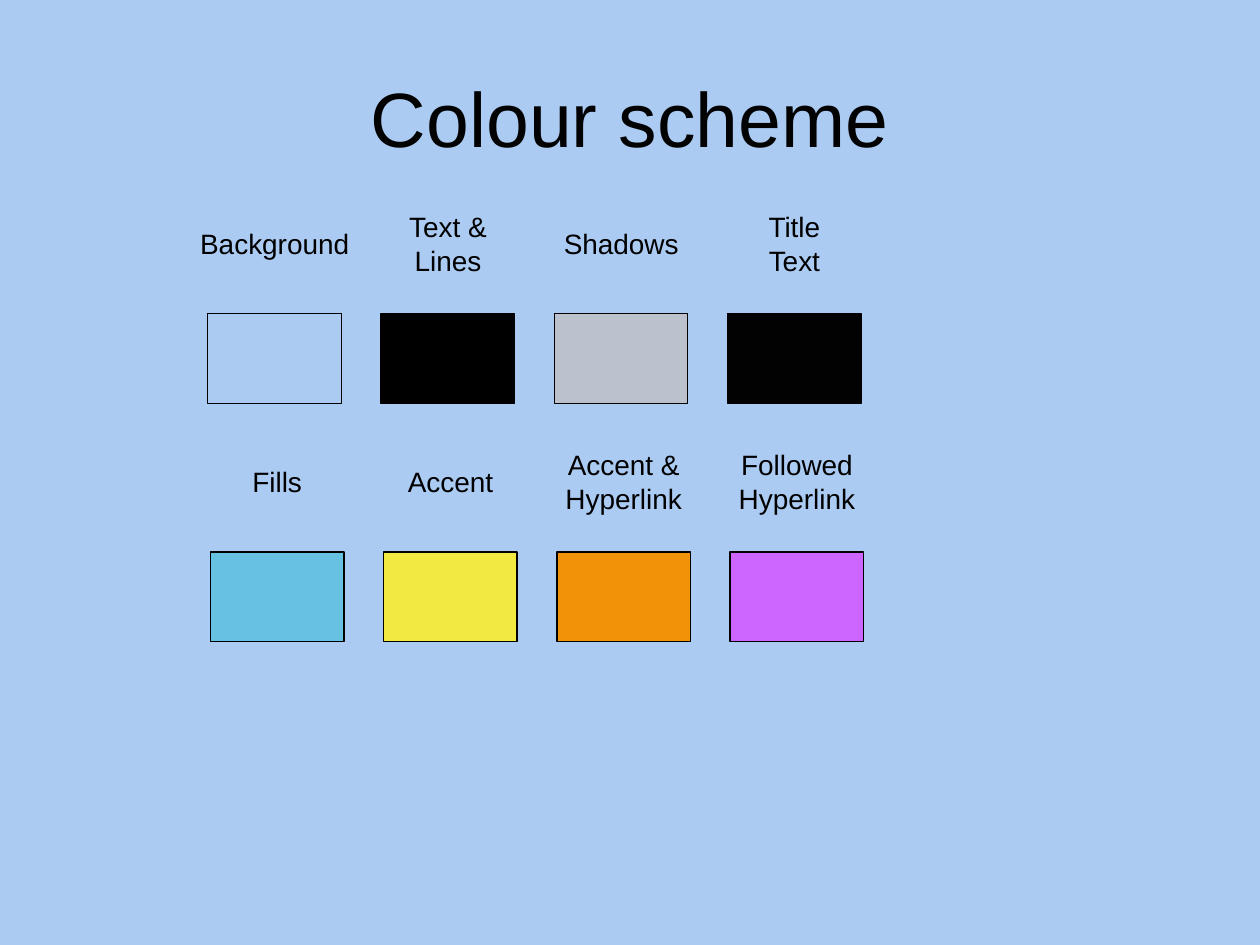
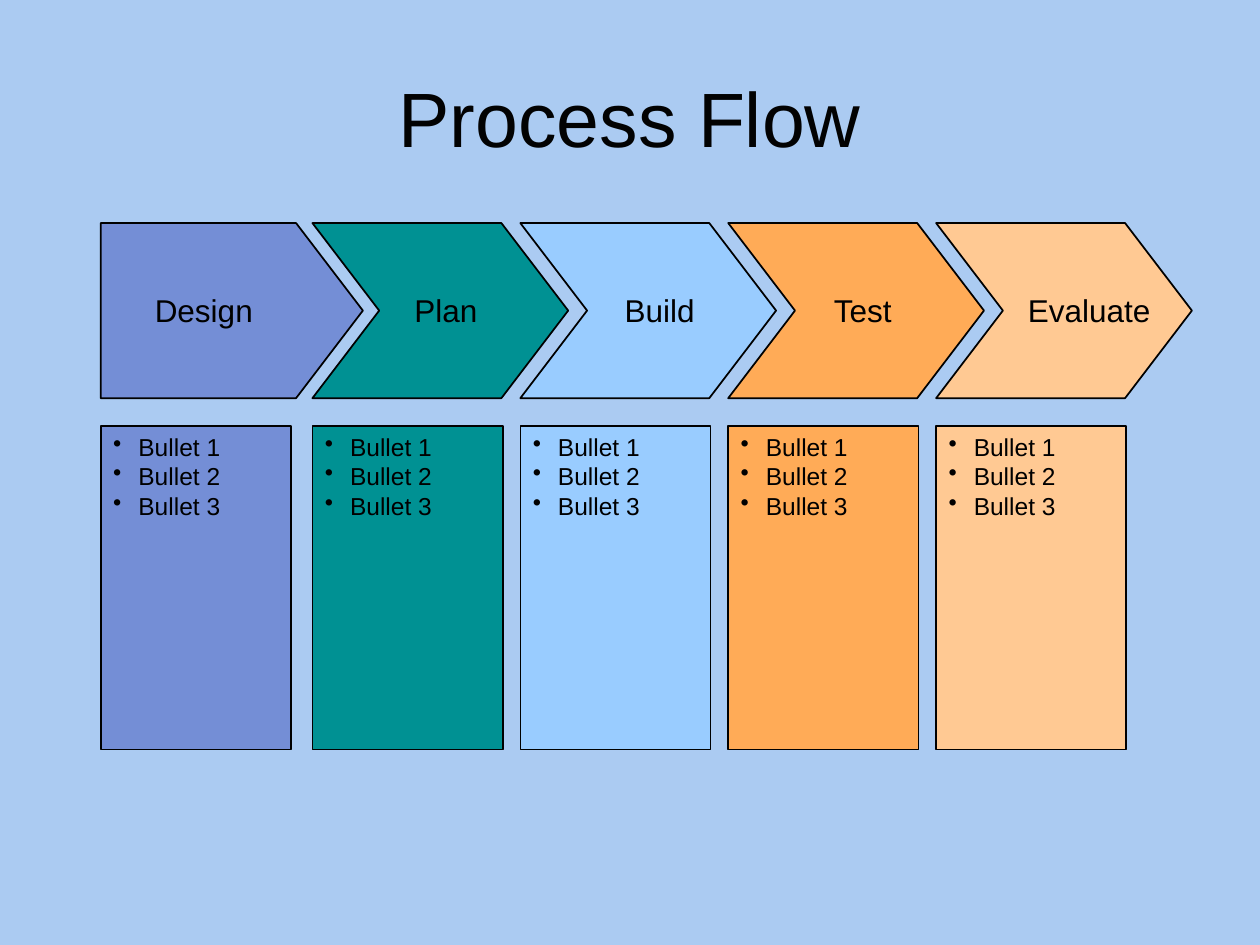
from lxml.etree import SubElement
from pptx import Presentation
from pptx.dml.color import RGBColor
from pptx.enum.shapes import MSO_SHAPE
from pptx.enum.text import MSO_ANCHOR, PP_ALIGN
from pptx.oxml.ns import qn
from pptx.util import Inches, Pt

FONT = "Arial"
COLOURS = {
    "background": "ABCBF2", "text": "000000", "title": "020202",
    "shadows": "BBC1CD", "fills": "67C1E0", "accent": "F2EA40",
    "hyperlink": "F19309", "followed": "CC66FF",
    "design": "748ED6", "plan": "009193", "build": "99CCFF",
    "test": "FFAB57", "evaluate": "FFC993",
}
SCHEME_ROWS = [
    (1.65, 2.49, [("Background", "background"), ("Text &\nLines", "text"),
                  ("Shadows", "shadows"), ("Title\vText", "title")]),
    (1.67, 4.38, [("Fills", "fills"), ("Accent", "accent"),
                  ("Accent &\nHyperlink", "hyperlink"),
                  ("Followed\nHyperlink", "followed")]),
]
STAGES = [
    ("Design", 0.8, 0.33, 0.98),
    ("Plan", 2.48, 0.71, 0.7),
    ("Build", 4.13, 0.73, 0.76),
    ("Test", 5.78, 0.74, 0.69),
    ("Evaluate", 7.43, 0.63, 1.17),
]
BULLETS = ["Bullet 1", "Bullet 2", "Bullet 3"]


def colour(name):
    return RGBColor.from_string(COLOURS[name])


def paint(shape, fill, line_width):
    shape.shadow.inherit = False
    shape.fill.solid()
    shape.fill.fore_color.rgb = colour(fill)
    shape.line.color.rgb = colour("text")
    shape.line.width = Pt(line_width)


def style(paragraph, size, align, ink="text"):
    paragraph.alignment = align
    paragraph.font.name = FONT
    paragraph.font.size = Pt(size)
    paragraph.font.color.rgb = colour(ink)


def add_text(shapes, box, text, size, align, ink="text", wrap=False):
    frame = shapes.add_textbox(*map(Inches, box)).text_frame
    frame.word_wrap = wrap
    frame.vertical_anchor = MSO_ANCHOR.MIDDLE
    frame.text = text
    for paragraph in frame.paragraphs:
        style(paragraph, size, align, ink)


def add_titled_slide(deck, title):
    slide = deck.slides.add_slide(deck.slide_layouts[6])
    slide.background.fill.solid()
    slide.background.fill.fore_color.rgb = colour("background")
    add_text(slide.shapes, (0.5, 0.3, 9, 1.25), title, 44,
             PP_ALIGN.CENTER, "title", wrap=True)
    return slide


def add_rectangle(shapes, box, fill, line_width):
    rectangle = shapes.add_shape(MSO_SHAPE.RECTANGLE, *map(Inches, box))
    paint(rectangle, fill, line_width)
    return rectangle


def add_swatch_row(shapes, left, top, swatches):
    width, height, pitch = 1.06, 0.71, 1.375
    label_width, label_height = 1.38, 0.64
    for column, (label, fill) in enumerate(swatches):
        x = left + column * pitch
        add_rectangle(shapes, (x, top, width, height), fill, 0.75)
        add_text(shapes, (x + (width - label_width) / 2, top - 0.88,
                          label_width, label_height),
                 label, 16, PP_ALIGN.CENTER)


def add_stage_arrow(shapes, left, top, body, notched, fill):
    tip, height = 0.53, 1.39
    outline = [(left + body, top), (left + body + tip, top + height / 2),
               (left + body, top + height), (left, top + height)]
    if notched:
        outline.append((left + tip, top + height / 2))
    builder = shapes.build_freeform(Inches(left), Inches(top))
    builder.add_line_segments([(Inches(x), Inches(y)) for x, y in outline])
    paint(builder.convert_to_shape(), fill, 1)


def add_bullet_panel(shapes, box, fill):
    frame = add_rectangle(shapes, box, fill, 1).text_frame
    frame.word_wrap = True
    frame.vertical_anchor = MSO_ANCHOR.TOP
    frame.text = "\n".join(BULLETS)
    for paragraph in frame.paragraphs:
        properties = paragraph._p.get_or_add_pPr()
        properties.set("marL", str(Inches(0.2)))
        properties.set("indent", str(Inches(-0.2)))
        SubElement(properties, qn("a:buChar")).set("char", "•")
        style(paragraph, 14, PP_ALIGN.LEFT)


def build_colour_scheme(deck):
    slide = add_titled_slide(deck, "Colour scheme")
    scheme = slide.shapes.add_group_shape().shapes
    for left, top, swatches in SCHEME_ROWS:
        add_swatch_row(scheme, left, top, swatches)


def build_process_flow(deck):
    shapes = add_titled_slide(deck, "Process Flow").shapes
    for step, (stage, left, label_offset, label_width) in enumerate(STAGES):
        fill = stage.lower()
        add_bullet_panel(shapes, (left, 3.38, 1.51, 2.57), fill)
        add_stage_arrow(shapes, left, 1.77, 1.5 if step else 1.55,
                        step > 0, fill)
        add_text(shapes, (left + label_offset, 2.26, label_width, 0.4),
                 stage, 18, PP_ALIGN.LEFT)


def main():
    deck = Presentation()
    deck.slide_width = Inches(10)
    deck.slide_height = Inches(7.5)
    build_colour_scheme(deck)
    build_process_flow(deck)
    deck.save("out.pptx")


if __name__ == "__main__":
    main()
